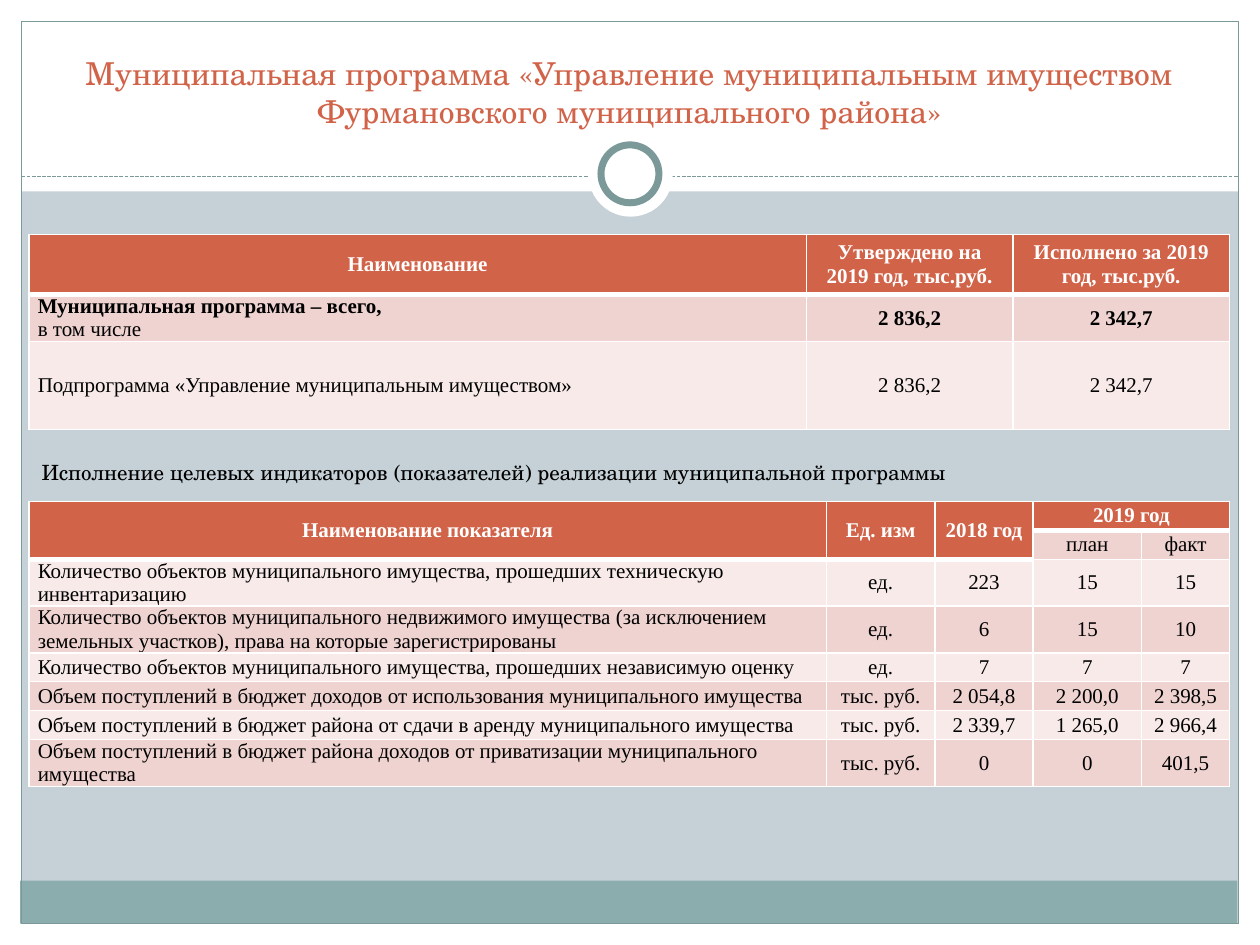
from lxml import etree
from pptx import Presentation
from pptx.dml.color import RGBColor
from pptx.enum.dml import MSO_LINE
from pptx.enum.shapes import MSO_CONNECTOR, MSO_SHAPE
from pptx.enum.text import MSO_ANCHOR, MSO_AUTO_SIZE, PP_ALIGN
from pptx.oxml.ns import qn
from pptx.util import Inches, Pt

RECT, OVAL = MSO_SHAPE.RECTANGLE, MSO_SHAPE.OVAL
STRAIGHT, SYS_DASH = MSO_CONNECTOR.STRAIGHT, MSO_LINE.SQUARE_DOT
LEFT, CENTER, JUSTIFY = PP_ALIGN.LEFT, PP_ALIGN.CENTER, PP_ALIGN.JUSTIFY
MIDDLE, TOP, BOTTOM = MSO_ANCHOR.MIDDLE, MSO_ANCHOR.TOP, MSO_ANCHOR.BOTTOM
NO_FIT = MSO_AUTO_SIZE.NONE

HEADING_FONT, TABLE_FONT = "TeX Gyre Schola", "Times New Roman"
WHITE, BLACK, BACKGROUND = "FFFFFF", "000000", "C5D1D7"
ACCENT, FRAME, FOOTER = "D16349", "7C999A", "8CADAE"
DARK_BAND, LIGHT_BAND = "EED3D0", "F7EAE9"

BUDGET = [
    ["Наименование", "Утверждено на 2019 год, тыс.руб.", "Исполнено за 2019 год, тыс.руб."],
    ["Муниципальная программа – всего,", "2 836,2", "2 342,7"],
    ["Подпрограмма «Управление муниципальным имуществом»", "2 836,2", "2 342,7"],
]
INDICATORS = [
    ["Наименование показателя", "Ед. изм", "2018 год", "2019 год", ""],
    ["", "", "", "план", "факт"],
    ["Количество объектов муниципального имущества, прошедших техническую инвентаризацию",
     "ед.", "223", "15", "15"],
    ["Количество объектов муниципального недвижимого имущества (за исключением "
     "земельных участков), права на которые зарегистрированы", "ед.", "6", "15", "10"],
    ["Количество объектов муниципального имущества, прошедших независимую оценку",
     "ед.", "7", "7", "7"],
    ["Объем поступлений в бюджет доходов от использования муниципального имущества",
     "тыс. руб.", "2 054,8", "2 200,0", "2 398,5"],
    ["Объем поступлений в бюджет района от сдачи в аренду муниципального имущества",
     "тыс. руб.", "2 339,7", "1 265,0", "2 966,4"],
    ["Объем поступлений в бюджет района доходов от приватизации муниципального имущества",
     "тыс. руб.", "0", "0", "401,5"],
]


def rgb(color):
    return RGBColor.from_string(color)


def write(paragraph, text, font=TABLE_FONT, size=12, color=BLACK, bold=False, align=CENTER):
    paragraph.alignment = align
    run = paragraph.add_run()
    run.text = text
    run.font.name = font
    run.font.size = Pt(size)
    run.font.bold = bold
    run.font.color.rgb = rgb(color)


def add_panel(slide, box, kind=RECT, fill=None, line=None, width=0.75):
    panel = slide.shapes.add_shape(kind, *map(Inches, box))
    panel.shadow.inherit = False
    if fill:
        panel.fill.solid()
        panel.fill.fore_color.rgb = rgb(fill)
    else:
        panel.fill.background()
    if line:
        panel.line.color.rgb = rgb(line)
        panel.line.width = Pt(width)
    else:
        panel.line.fill.background()


def add_divider(slide, left, right, y):
    divider = slide.shapes.add_connector(STRAIGHT, *map(Inches, (left, y, right, y)))
    divider.line.color.rgb = rgb(FRAME)
    divider.line.width = Pt(0.75)
    divider.line.dash_style = SYS_DASH
    etree.SubElement(divider._element.spPr, qn("a:effectLst"))


def add_frame(slide):
    for box in [(0, 7.33, 10, 0.17), (0, 0, 10, 1.52), (0, 0, 0.17, 7.5), (9.83, 0, 0.17, 7.5)]:
        add_panel(slide, box, fill=WHITE)
    add_panel(slide, (0.16, 6.99, 9.66, 0.34), fill=FOOTER)
    add_panel(slide, (0.17, 0.17, 9.66, 7.16), line=FRAME)
    add_divider(slide, 0.17, 9.83, 1.4)
    add_panel(slide, (4.67, 1.05, 0.67, 0.67), OVAL, fill=WHITE)
    add_panel(slide, (4.77, 1.15, 0.46, 0.46), OVAL, fill=WHITE, line=FRAME, width=4)


def fill_placeholder(slide, placeholder, box, text, anchor, **style):
    placeholder.left, placeholder.top, placeholder.width, placeholder.height = map(Inches, box)
    frame = placeholder.text_frame
    frame.auto_size = NO_FIT
    frame.word_wrap = True
    frame.vertical_anchor = anchor
    write(frame.paragraphs[0], text, font=HEADING_FONT, **style)
    slide.shapes._spTree.append(placeholder._element)
    return frame.paragraphs[0]


def set_borders(cell, bottom):
    properties = cell._tc.get_or_add_tcPr()
    for place, (side, width) in enumerate([("L", 1), ("R", 1), ("T", 1), ("B", bottom)]):
        border = etree.Element(qn(f"a:ln{side}"), w=str(Pt(width)))
        fill = etree.SubElement(border, qn("a:solidFill"))
        etree.SubElement(fill, qn("a:srgbClr"), val=WHITE)
        properties.insert(place, border)


def format_cell(cell, fill, bottom):
    cell.fill.solid()
    cell.fill.fore_color.rgb = rgb(fill)
    cell.vertical_anchor = MIDDLE
    cell.margin_left = cell.margin_right = Inches(0.07)
    cell.margin_top = cell.margin_bottom = 0
    set_borders(cell, bottom)


def add_grid(slide, box, widths, heights, rows, name_align, bold_rows, is_header):
    table = slide.shapes.add_table(len(rows), len(widths), *map(Inches, box)).table
    for column, width in zip(table.columns, widths):
        column.width = Inches(width)
    for row, height in zip(table.rows, heights):
        row.height = Inches(height)
    for r, texts in enumerate(rows):
        for c, text in enumerate(texts):
            header = is_header(r, c)
            band = DARK_BAND if r % 2 else LIGHT_BAND
            cell = table.cell(r, c)
            format_cell(cell, ACCENT if header else band, 3 if header else 1)
            if text:
                write(cell.text_frame.paragraphs[0], text,
                      color=WHITE if header else BLACK,
                      bold=r in bold_rows,
                      align=CENTER if header or c else name_align)
    return table


def main():
    deck = Presentation()
    deck.slide_width, deck.slide_height = Inches(10), Inches(7.5)
    slide = deck.slides.add_slide(deck.slide_layouts[1])
    slide.background.fill.solid()
    slide.background.fill.fore_color.rgb = rgb(BACKGROUND)
    add_frame(slide)

    fill_placeholder(
        slide, slide.shapes.title, (0.33, 0.25, 9.33, 0.83),
        "Муниципальная программа «Управление муниципальным имуществом "
        "Фурмановского муниципального района»", BOTTOM, size=18, color=ACCENT)

    budget = add_grid(slide, (0.23, 1.86, 9.53, 1.5), [6.17, 1.64, 1.72], [0.48, 0.32, 0.7],
                      BUDGET, JUSTIFY, {0, 1}, lambda r, c: r == 0)
    write(budget.cell(1, 0).text_frame.add_paragraph(), "в том числе", align=JUSTIFY)

    subtitle = fill_placeholder(
        slide, slide.placeholders[1], (0.23, 3.6, 9.3, 0.39),
        "Исполнение целевых индикаторов (показателей) реализации муниципальной программы",
        TOP, align=LEFT)
    subtitle.space_before = Pt(2.4)
    indents = subtitle._p.get_or_add_pPr()
    indents.set("marL", str(Inches(0.3)))
    indents.set("indent", str(Inches(-0.3)))
    etree.SubElement(indents, qn("a:buNone"))

    indicators = add_grid(slide, (0.23, 3.98, 9.53, 1.84), [6.33, 0.86, 0.78, 0.86, 0.7],
                          [0.23] * len(INDICATORS), INDICATORS, LEFT, {0},
                          lambda r, c: r == 0 or (r == 1 and c < 3))
    for c in range(3):
        indicators.cell(0, c).merge(indicators.cell(1, c))
    indicators.cell(0, 3).merge(indicators.cell(0, 4))

    deck.save("out.pptx")


if __name__ == "__main__":
    main()
